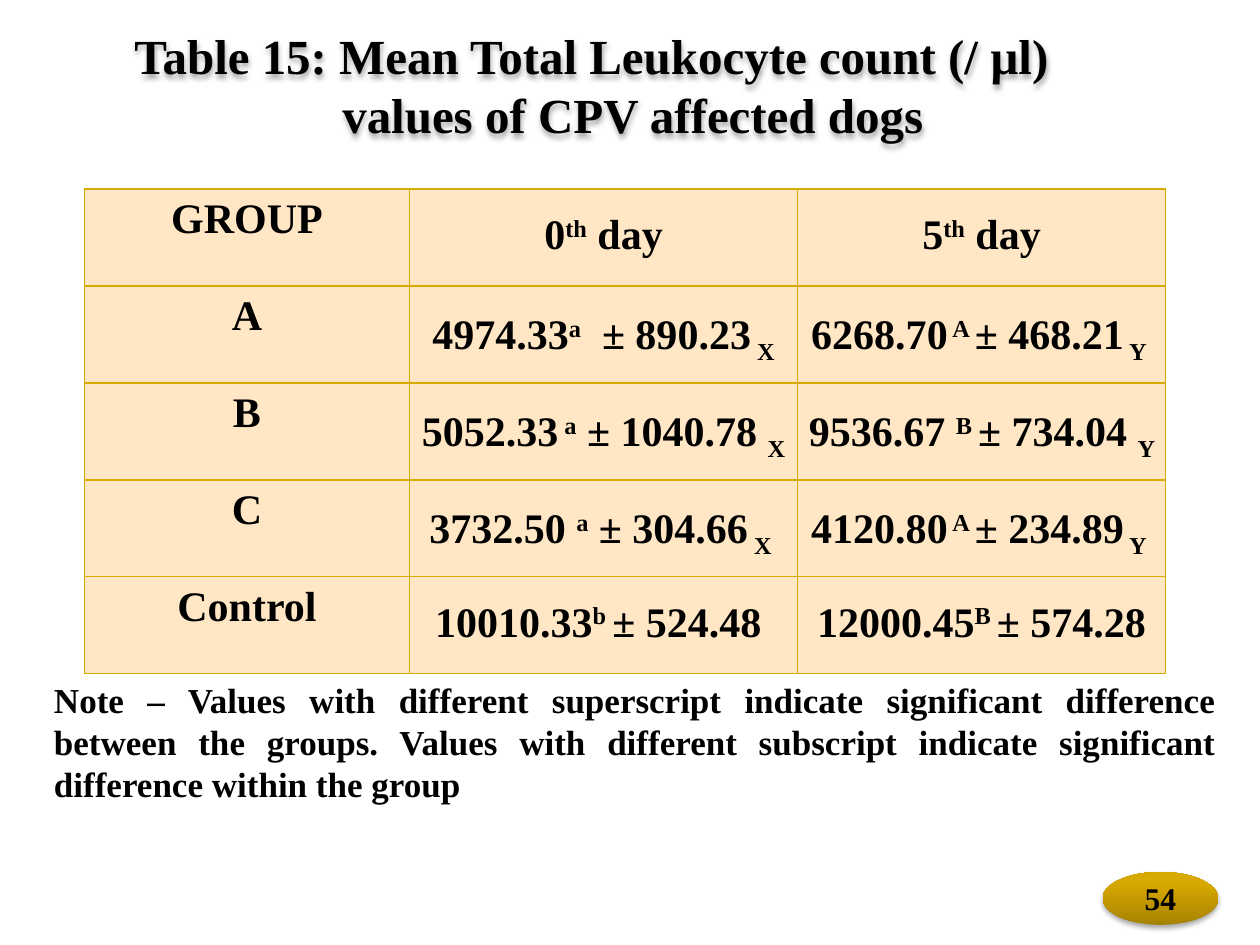
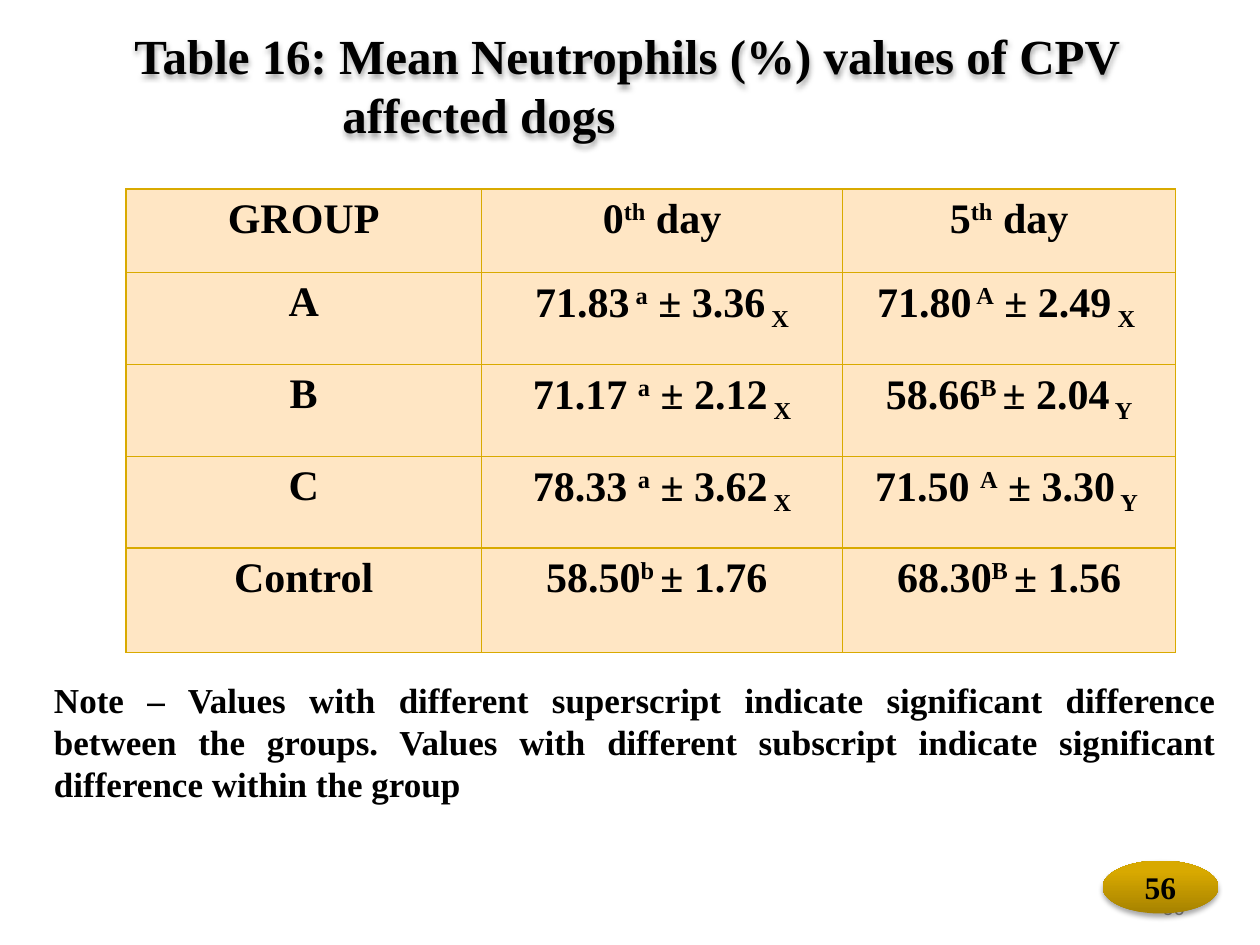
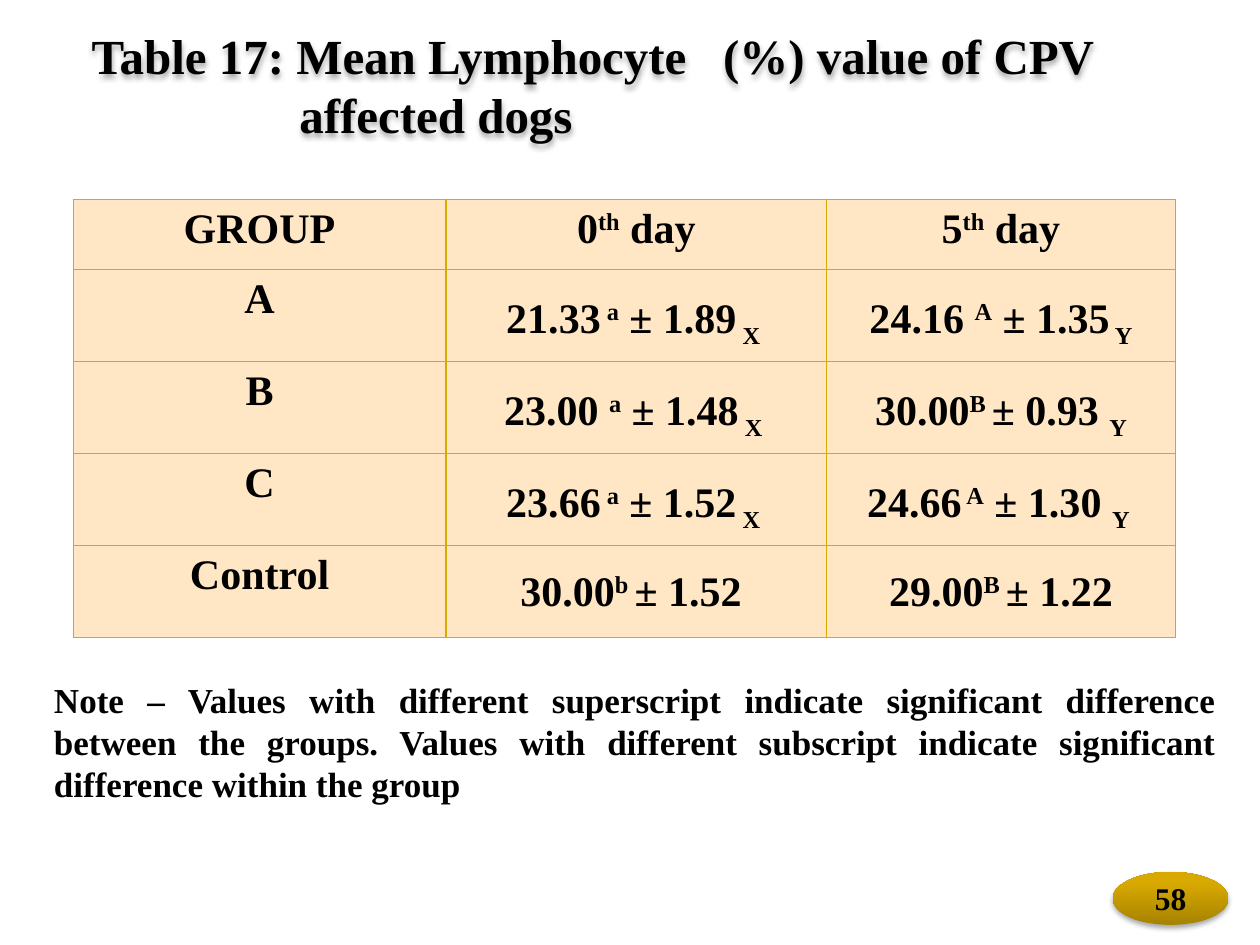
from dataclasses import dataclass

from lxml import etree
from pptx import Presentation
from pptx import util as u
from pptx.dml import color
from pptx.enum import shapes, text
from pptx.oxml import ns

BLACK, GOLD, DARK_GOLD, CREAM, GREY = "000000", "D8A900", "A68200", "FFE6C4", "8C8C8C"
BORDER = "D9AA00"
SERIF = "Times New Roman"
TITLE = {"name": SERIF, "size": u.Pt(28), "bold": True}
CELL = {"name": SERIF, "size": u.Pt(24), "bold": True}
NOTE = {"name": SERIF, "size": u.Pt(20), "bold": True}
BADGE = {"name": SERIF, "size": u.Pt(18), "bold": True}
FOOTER = {"name": "Calibri", "size": u.Pt(12)}
BASELINES = {"^": "30000", "_": "-25000"}
HEADINGS = ("GROUP", "0|^th| day", "5|^th| day")
GROUPS = ("A", "B", "C", "Control")
NOTE_TEXT = (
    "Note – Values with different superscript indicate significant difference "
    "between the groups. Values with different subscript indicate significant "
    "difference within the group"
)


@dataclass
class CountTable:
    """One slide's title, table values and layout."""
    title: tuple
    title_box: tuple
    corner: tuple
    columns: tuple
    rows: tuple
    heading_spacing: float
    value_spacing: float
    values: tuple
    page: str
    badge_corner: tuple
    title_align: text.PP_ALIGN = text.PP_ALIGN.LEFT
    footer_shows: bool = False


COUNT_TABLES = (
    CountTable(
        ("Table 15: Mean Total Leukocyte count (/ µl)", "values of CPV affected dogs"),
        (0.92, 0.17, 8.25, 1), (0.67, 1.5), (2.58, 3.08, 2.92), (0.77,) * 5, 1.5, 1.5,
        (
            ("4974.33|^a|  ± 890.23|_ X", "6268.70|^ A |± 468.21|_ Y "),
            ("5052.33|^ a| ± 1040.78 |_X", "9536.67 |^B |± 734.04 |_Y "),
            ("3732.50 |^a| ± 304.66|_ X ", "4120.80|^ A |± 234.89|_ Y "),
            ("10010.33|^b |± 524.48 ", "12000.45|^B |± 574.28"),
        ),
        "54", (8.75, 6.92),
    ),
    CountTable(
        ("Table 16: Mean Neutrophils (%) values of CPV", "affected dogs"),
        (0.92, 0.17, 8.25, 1), (1, 1.5), (2.82, 2.87, 2.64),
        (0.66, 0.73, 0.73, 0.73, 0.83), 1.15, 1.15,
        (
            ("71.83|^ a| ± 3.36|_ X", "71.80|^ A| ± 2.49|_ X "),
            ("71.17 |^a| ± 2.12|_ X", "58.66|^B |± 2.04|_ Y"),
            ("78.33 |^a| ± 3.62|_ X", "71.50 |^A| ± 3.30|_ Y "),
            ("58.50|^b |± 1.76 ", "68.30|^B |± 1.56"),
        ),
        "56", (8.75, 6.83), footer_shows=True,
    ),
    CountTable(
        ("Table 17: Mean Lymphocyte   (%) value of CPV", "affected dogs"),
        (0.58, 0.17, 8.83, 1), (0.58, 1.58), (2.96, 3.02, 2.77),
        (0.56,) + (0.73,) * 4, 1.15, 1.5,
        (
            ("21.33|^ a| ± 1.89|_ X ", "24.16 |^A| ± 1.35|_ Y"),
            ("23.00 |^a| ± 1.48|_ X ", "30.00|^B |± 0.93 |_Y"),
            ("23.66|^ a| ± 1.52|_ X ", "24.66|^ A| ± 1.30 |_Y "),
            ("30.00|^b |± 1.52 ", "29.00|^B |± 1.22"),
        ),
        "58", (8.83, 6.92), title_align=text.PP_ALIGN.JUSTIFY,
    ),
)


def rgb(value):
    """Turn a hex string into a colour."""
    return color.RGBColor.from_string(value)


def inches(*lengths):
    """Turn numbers into lengths in inches."""
    return [u.Inches(length) for length in lengths]


def set_all(target, values):
    """Set each named attribute of the target."""
    for name, value in values.items():
        setattr(target, name, value)


def write(paragraph, marked, font, align, ink=BLACK, spacing=1.0):
    """Write pieces split by bars; ^ raises a piece and _ lowers it."""
    set_all(paragraph, {"alignment": align, "line_spacing": spacing})
    for piece in marked.split("|"):
        run = paragraph.add_run()
        run.text = piece.lstrip("^_")
        set_all(run.font, font)
        run.font.color.rgb = rgb(ink)
        if piece[0] in BASELINES:
            run.font._element.set("baseline", BASELINES[piece[0]])


def add_shadow(shape):
    """Give the shape a soft shadow below it."""
    shape.shadow.inherit = False
    effects = shape._element.spPr.find(ns.qn("a:effectLst"))
    shadow = etree.SubElement(effects, ns.qn("a:outerShdw"), blurRad=str(u.Pt(3.1)),
                              dist=str(u.Pt(1.8)), dir="5400000", rotWithShape="0")
    tint = etree.SubElement(shadow, ns.qn("a:srgbClr"), val=BLACK)
    etree.SubElement(tint, ns.qn("a:alpha"), val="35000")


def add_title(slide, lines, box, align):
    """Add the shadowed two-line title, its second line indented."""
    title = slide.shapes.add_shape(shapes.MSO_SHAPE.ROUNDED_RECTANGLE, *inches(*box))
    title.fill.background()
    title.line.fill.background()
    add_shadow(title)
    frame = title.text_frame
    set_all(frame, {"word_wrap": True, "vertical_anchor": text.MSO_ANCHOR.MIDDLE})
    write(frame.paragraphs[0], lines[0], TITLE, align)
    second = frame.add_paragraph()
    write(second, lines[1], TITLE, align)
    second._p.get_or_add_pPr().set("marL", str(u.Inches(1.65)))


def add_borders(cell):
    """Draw a thin gold line on each side of the cell."""
    properties = cell._tc.get_or_add_tcPr()
    for place, side in enumerate(("lnL", "lnR", "lnT", "lnB")):
        line = etree.Element(ns.qn("a:" + side), w=str(u.Pt(0.75)))
        fill = etree.SubElement(line, ns.qn("a:solidFill"))
        etree.SubElement(fill, ns.qn("a:srgbClr"), val=BORDER)
        properties.insert(place, line)


def add_count_table(slide, count):
    """Add the table of groups and their values on both days."""
    size = sum(count.columns), sum(count.rows)
    table = slide.shapes.add_table(len(count.rows), len(count.columns),
                                   *inches(*count.corner, *size)).table
    set_all(table, {"first_row": False, "horz_banding": False})
    for column, width in zip(table.columns, count.columns):
        column.width = u.Inches(width)
    for row, height in zip(table.rows, count.rows):
        row.height = u.Inches(height)
    margins = dict(zip(("margin_left", "margin_top", "margin_right", "margin_bottom"),
                       inches(0.07, 0, 0.07, 0)))
    lines = [HEADINGS] + [(group, *pair) for group, pair in zip(GROUPS, count.values)]
    for r, line in enumerate(lines):
        for c, marked in enumerate(line):
            cell = table.cell(r, c)
            set_all(cell, margins)
            cell.fill.solid()
            cell.fill.fore_color.rgb = rgb(CREAM)
            add_borders(cell)
            spacing = count.value_spacing if r else count.heading_spacing
            write(cell.text_frame.paragraphs[0], marked, CELL, text.PP_ALIGN.CENTER,
                  spacing=spacing if c else 1.15)


def add_text(slide, words, box, font, align, ink=BLACK):
    """Add a wrapped text box centred vertically."""
    frame = slide.shapes.add_textbox(*inches(*box)).text_frame
    set_all(frame, {"word_wrap": True, "vertical_anchor": text.MSO_ANCHOR.MIDDLE})
    write(frame.paragraphs[0], words, font, align, ink)


def add_page_badge(slide, page, corner):
    """Add the gold oval with the page number."""
    badge = slide.shapes.add_shape(shapes.MSO_SHAPE.OVAL, *inches(*corner, 0.92, 0.42))
    badge.fill.gradient()
    badge.fill.gradient_angle = 90
    for stop, hue, position in zip(badge.fill.gradient_stops, (DARK_GOLD, GOLD), (0, 0.8)):
        stop.color.rgb = rgb(hue)
        stop.position = position
    badge.line.fill.background()
    add_shadow(badge)
    badge.text_frame.vertical_anchor = text.MSO_ANCHOR.MIDDLE
    write(badge.text_frame.paragraphs[0], page, BADGE, text.PP_ALIGN.CENTER)


def main():
    """Build the three count slides and save them."""
    deck = Presentation()
    set_all(deck, {"slide_width": u.Inches(10), "slide_height": u.Inches(7.5)})
    for count in COUNT_TABLES:
        slide = deck.slides.add_slide(deck.slide_layouts[6])
        if count.footer_shows:
            add_text(slide, count.page, (7.17, 7, 2.33, 0.4), FOOTER,
                     text.PP_ALIGN.RIGHT, GREY)
        add_count_table(slide, count)
        add_title(slide, count.title, count.title_box, count.title_align)
        add_page_badge(slide, count.page, count.badge_corner)
        add_text(slide, NOTE_TEXT, (0.33, 5.33, 9.42, 1.11), NOTE, text.PP_ALIGN.JUSTIFY)
    deck.save("out.pptx")


if __name__ == "__main__":
    main()
